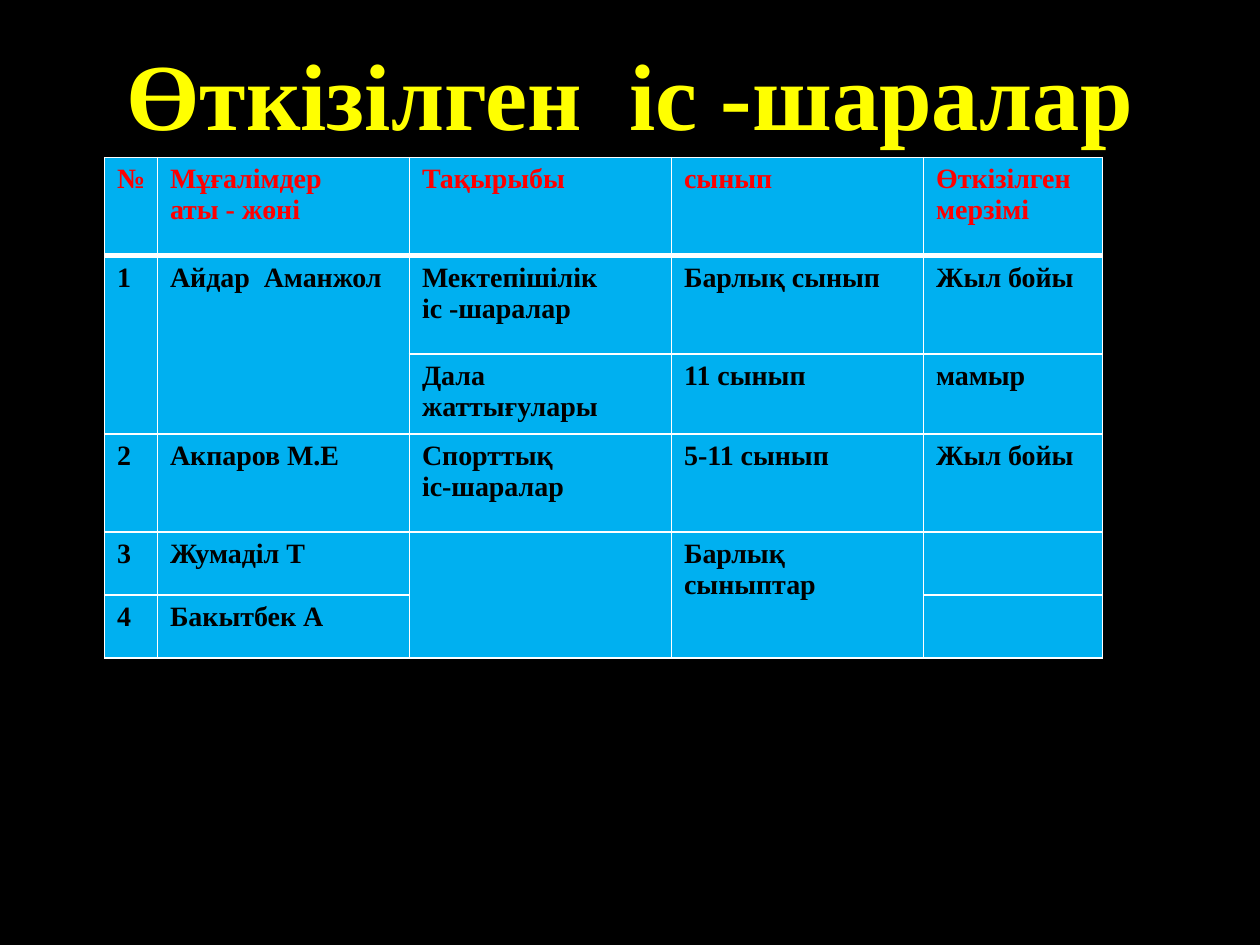
from lxml import etree
from pptx import Presentation
from pptx.dml.color import RGBColor
from pptx.enum.text import MSO_ANCHOR, PP_ALIGN
from pptx.oxml.ns import qn
from pptx.util import Inches, Pt

MIDDLE = MSO_ANCHOR.MIDDLE
CENTER = PP_ALIGN.CENTER

BLACK = RGBColor(0x00, 0x00, 0x00)
WHITE = RGBColor(0xFF, 0xFF, 0xFF)
YELLOW = RGBColor(0xFF, 0xFF, 0x00)
RED = RGBColor(0xFF, 0x00, 0x00)
SKY_BLUE = RGBColor(0x00, 0xB0, 0xF0)
FONT = "Times New Roman"

COLUMN_WIDTHS = [0.42, 2, 2.08, 2, 1.42]
ROW_HEIGHTS = [0.78, 0.78, 0.43, 0.78, 0.5, 0.5]
# A line break in a cell starts a new paragraph
EVENTS = [
    ["№", "Мұғалімдер\nаты - жөні", "Тақырыбы", "сынып", "Өткізілген  мерзімі"],
    ["1", "Айдар  Аманжол", "Мектепішілік\nіс -шаралар", "Барлық сынып", "Жыл бойы"],
    ["", "", "Дала  жаттығулары", "11 сынып", "мамыр"],
    ["2", "Акпаров М.Е", "Спорттық\nіс-шаралар", "5-11 сынып", "Жыл бойы"],
    ["3", "Жумаділ Т", "", "Барлық сыныптар", ""],
    ["4", "Бакытбек А", "", "", ""],
]
# (upper row, column) of each cell that covers two rows
TWO_ROW_CELLS = [(1, 0), (1, 1), (4, 2), (4, 3)]


def add_run(paragraph, text, size, color):
    run = paragraph.add_run()
    run.text = text
    run.font.name = FONT
    run.font.size = Pt(size)
    run.font.bold = True
    run.font.color.rgb = color


def set_borders(cell, bottom_width):
    properties = cell._tc.get_or_add_tcPr()
    widths = {"a:lnL": 1, "a:lnR": 1, "a:lnT": 1, "a:lnB": bottom_width}
    for position, (side, width) in enumerate(widths.items()):
        line = etree.Element(qn(side), w=str(Pt(width)))
        fill = etree.SubElement(line, qn("a:solidFill"))
        etree.SubElement(fill, qn("a:srgbClr"), val=str(WHITE))
        properties.insert(position, line)


def add_title(slide, left, top, width, height):
    title = slide.shapes.add_textbox(left, top, width, height)
    frame = title.text_frame
    frame.word_wrap = True
    frame.vertical_anchor = MIDDLE
    heading = frame.paragraphs[0]
    heading.alignment = CENTER
    add_run(heading, "Өткізілген  іс -шаралар", 54, YELLOW)


def add_events_table(slide, left, top, width, height):
    events_frame = slide.shapes.add_table(
        len(EVENTS), len(COLUMN_WIDTHS), left, top, width, height)
    table = events_frame.table
    for column, column_width in zip(table.columns, COLUMN_WIDTHS):
        column.width = Inches(column_width)
    for row, row_height in zip(table.rows, ROW_HEIGHTS):
        row.height = Inches(row_height)
    events_frame.height = height

    # Cell text, fill and borders
    for row_index, texts in enumerate(EVENTS):
        is_header = row_index == 0
        for column_index, text in enumerate(texts):
            cell = table.cell(row_index, column_index)
            cell.fill.solid()
            cell.fill.fore_color.rgb = SKY_BLUE
            set_borders(cell, 3 if is_header else 1)
            frame = cell.text_frame
            for line_index, line in enumerate(text.split("\n") if text else []):
                paragraph = frame.add_paragraph() if line_index else frame.paragraphs[0]
                add_run(paragraph, line, 16, RED if is_header else BLACK)

    # Cells shared by two rows
    for row_index, column_index in TWO_ROW_CELLS:
        upper = table.cell(row_index, column_index)
        upper.merge(table.cell(row_index + 1, column_index))


def main():
    presentation = Presentation()
    presentation.slide_width = Inches(10)
    presentation.slide_height = Inches(7.5)
    slide = presentation.slides.add_slide(presentation.slide_layouts[6])
    slide.background.fill.solid()
    slide.background.fill.fore_color.rgb = BLACK

    add_title(slide, Inches(0.5), Inches(0.3), Inches(9), Inches(0.87))
    add_events_table(slide, Inches(0.83), Inches(1.25), Inches(7.92), Inches(3.99))
    presentation.save("out.pptx")


if __name__ == "__main__":
    main()
